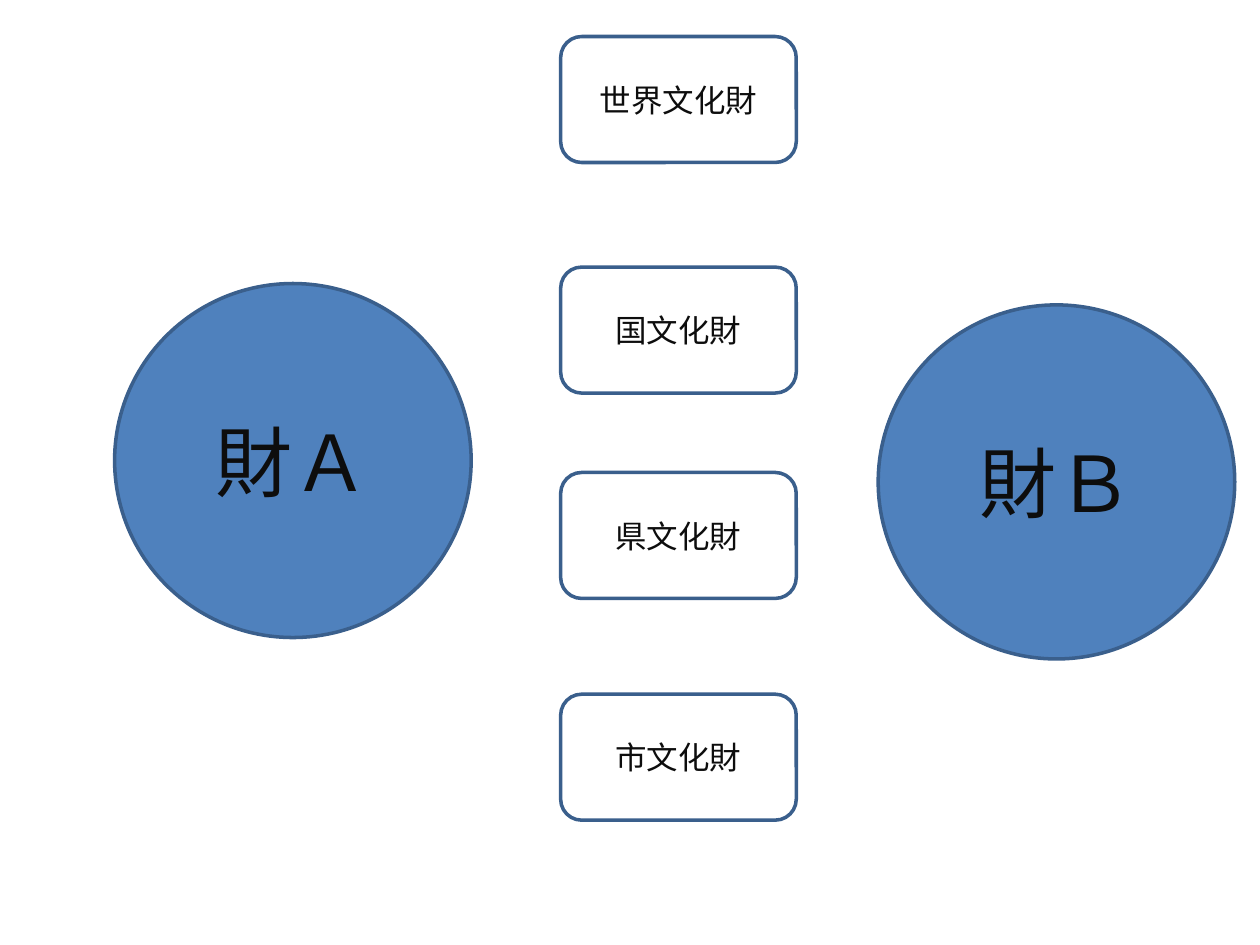
import dataclasses

import pptx
import pptx.dml.color
import pptx.enum.shapes
import pptx.enum.text
import pptx.util

Inches = pptx.util.Inches
Pt = pptx.util.Pt
Color = pptx.dml.color.RGBColor
ShapeKind = pptx.enum.shapes.MSO_SHAPE


@dataclasses.dataclass(frozen=True)
class Theme:
    font: str = "Calibri"
    text: Color = Color(0x0D, 0x0D, 0x0D)
    outline: Color = Color(0x3A, 0x5F, 0x8C)
    level_fill: Color = Color(0xFF, 0xFF, 0xFF)
    asset_fill: Color = Color(0x4F, 0x81, 0xBD)
    level_size: int = 18
    asset_size: int = 44
    line_width: int = 2


@dataclasses.dataclass(frozen=True)
class Node:
    label: str
    left: float
    top: float
    width: float
    height: float


@dataclasses.dataclass(frozen=True)
class Style:
    kind: ShapeKind
    fill: Color
    size: int


THEME = Theme()
LEVEL_STYLE = Style(ShapeKind.ROUNDED_RECTANGLE, THEME.level_fill, THEME.level_size)
ASSET_STYLE = Style(ShapeKind.OVAL, THEME.asset_fill, THEME.asset_size)

# Levels of designation share one column
LEVELS = [
    Node(label, 4.45, top, 1.87, 1)
    for label, top in (
        ("世界文化財", 0.29),
        ("国文化財", 2.12),
        ("県文化財", 3.75),
        ("市文化財", 5.51),
    )
]

# Assets stand on either side of the column
ASSETS = [
    Node(label, left, top, 2.83, 2.81)
    for label, left, top in (("財Ａ", 0.91, 2.25), ("財Ｂ", 6.97, 2.42))
]


def draw_node(page: pptx.slide.Slide, node: Node, style: Style) -> None:
    box = page.shapes.add_shape(
        style.kind,
        Inches(node.left),
        Inches(node.top),
        Inches(node.width),
        Inches(node.height),
    )
    box.shadow.inherit = False
    box.fill.solid()
    box.fill.fore_color.rgb = style.fill
    box.line.color.rgb = THEME.outline
    box.line.width = Pt(THEME.line_width)

    # Centred label
    frame = box.text_frame
    frame.word_wrap = True
    frame.vertical_anchor = pptx.enum.text.MSO_ANCHOR.MIDDLE
    para = frame.paragraphs[0]
    para.text = node.label
    para.alignment = pptx.enum.text.PP_ALIGN.CENTER
    para.font.name = THEME.font
    para.font.size = Pt(style.size)
    para.font.color.rgb = THEME.text


def main() -> None:
    deck = pptx.Presentation()
    deck.slide_width = Inches(10)
    deck.slide_height = Inches(7.5)
    page = deck.slides.add_slide(deck.slide_layouts[6])

    for nodes, style in ((LEVELS, LEVEL_STYLE), (ASSETS, ASSET_STYLE)):
        for node in nodes:
            draw_node(page, node, style)

    deck.save("out.pptx")


if __name__ == "__main__":
    main()
